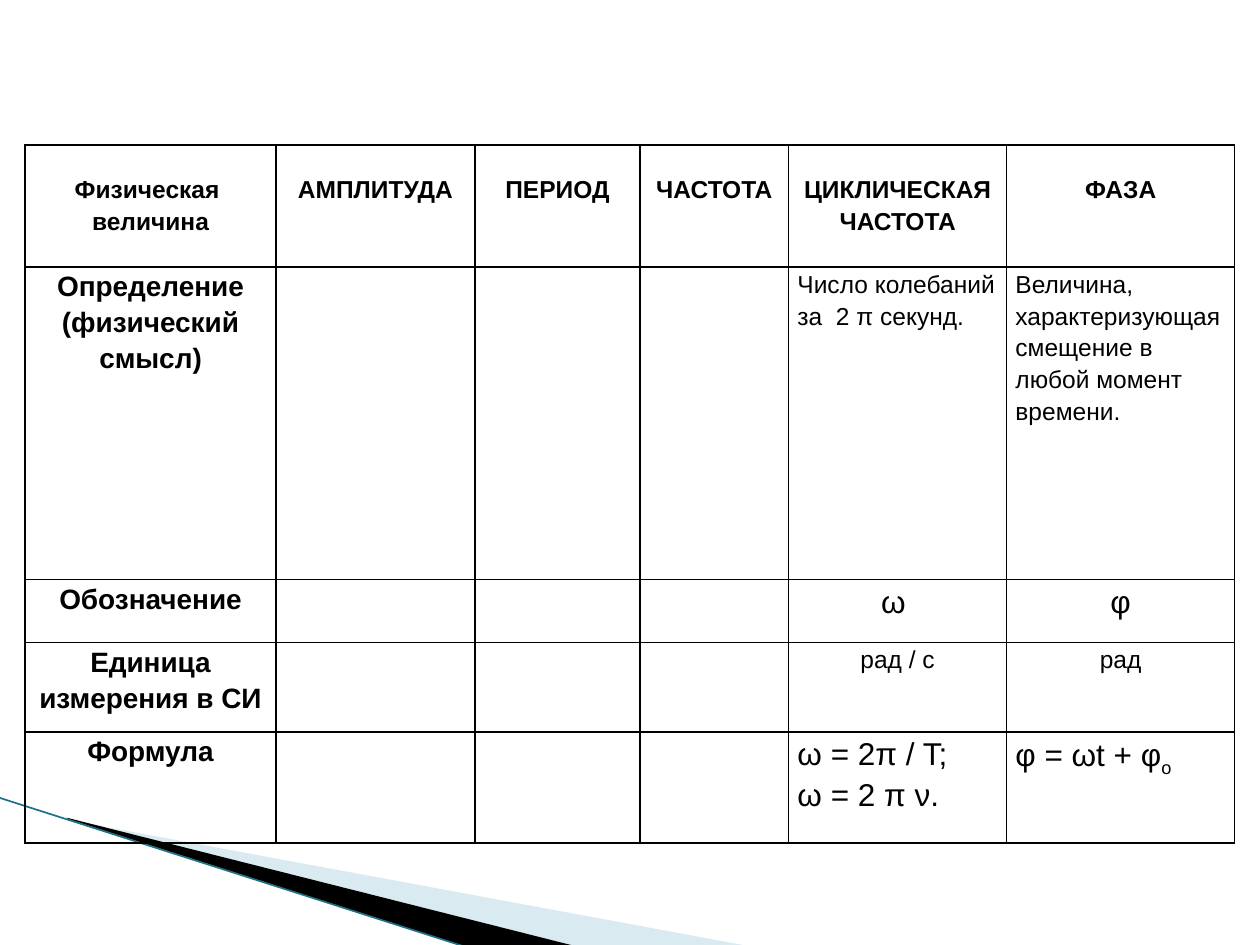
"""Build a slide with a table of oscillation quantities over a corner ornament."""
from lxml import etree
from pptx import Presentation
from pptx.dml.color import RGBColor
from pptx.enum.shapes import MSO_CONNECTOR
from pptx.enum.text import PP_ALIGN
from pptx.oxml import parse_xml
from pptx.oxml.ns import qn
from pptx.util import Inches, Pt

STRAIGHT = MSO_CONNECTOR.STRAIGHT
LEFT, CENTER = PP_ALIGN.LEFT, PP_ALIGN.CENTER
NAMESPACE = "http://schemas.openxmlformats.org/drawingml/2006/main"
BLACK = "000000"

HEADER = ["Физическая  величина", "АМПЛИТУДА", "ПЕРИОД", "ЧАСТОТА",
          "ЦИКЛИЧЕСКАЯ ЧАСТОТА", "ФАЗА"]
ROWS = [
    {"label": "Определение\n(физический смысл)", "size": 14, "align": LEFT,
     "values": ["Число колебаний за  2 π секунд.",
                "Величина, характеризующая смещение в любой момент времени."]},
    {"label": "Обозначение", "size": 18, "align": CENTER, "values": ["ω ", "φ"]},
    {"label": "Единица измерения в СИ", "size": 14, "align": CENTER,
     "values": ["рад / с", "рад"]},
    {"label": "Формула", "size": 18, "align": LEFT,
     "values": ["ω = 2π / Τ;\nω = 2 π ν.", "φ = ωt + φ"]},
]
PHASE_INDEX = "о"
COLUMN_WIDTHS = [1.99, 1.58, 1.31, 1.18, 1.73, 1.81]
ROW_HEIGHTS = [0.97, 2.48, 0.5, 0.71, 0.88]
TABLE_LEFT, TABLE_TOP = 0.2, 1.15
HEADER_INSET = 0.22

WEDGES = [
    {"points": [(0.55, 6.51), (5.95, 7.51), (4.56, 7.51), (0.55, 6.5)],
     "color": "A0CBDC", "opacity": 40},
    {"points": [(0.53, 6.49), (4.57, 7.51), (3.72, 7.52), (0.54, 6.5)],
     "color": BLACK, "opacity": 100},
]
EDGE = [(-0.01, 6.33), (3.71, 7.52)]
EDGE_COLOR = "1F7084"


def rgb(color):
    return RGBColor.from_string(color)


def add_wedge(page, points, color, opacity):
    corners = [(Inches(x), Inches(y)) for x, y in points]
    builder = page.shapes.build_freeform(*corners[0])
    builder.add_line_segments(corners[1:], close=True)
    wedge = builder.convert_to_shape()
    wedge.shadow.inherit = False
    wedge.fill.solid()
    wedge.fill.fore_color.rgb = rgb(color)
    wedge.line.fill.background()
    if opacity < 100:
        tint = wedge._element.spPr.find(qn("a:solidFill"))[0]
        etree.SubElement(tint, qn("a:alpha")).set("val", str(opacity * 1000))


def add_edge(page):
    start, end = EDGE
    edge = page.shapes.add_connector(
        STRAIGHT, *(Inches(value) for value in start + end))
    edge.line.color.rgb = rgb(EDGE_COLOR)
    edge.line.width = Pt(0.95)
    etree.SubElement(edge._element.spPr, qn("a:effectLst"))


def style_cell(cell):
    properties = cell._tc.get_or_add_tcPr()
    for side in "LRTB":
        properties.append(parse_xml(
            f'<a:ln{side} xmlns:a="{NAMESPACE}" w="{Pt(1)}"><a:solidFill>'
            f'<a:srgbClr val="{BLACK}"/></a:solidFill></a:ln{side}>'))
    cell.fill.background()
    cell.margin_left = cell.margin_right = Inches(0.07)
    cell.margin_top = cell.margin_bottom = 0


def format_span(span, size, bold):
    span.font.name = "Arial"
    span.font.size = Pt(size)
    span.font.bold = bold
    span.font.color.rgb = rgb(BLACK)


def write(cell, text, size, bold=False, align=CENTER):
    cell.text_frame.text = text
    for paragraph in cell.text_frame.paragraphs:
        paragraph.alignment = align
        paragraph.line_spacing = 1.15
        for span in paragraph.runs:
            format_span(span, size, bold)


def add_quantity_table(page):
    table = page.shapes.add_table(
        len(ROW_HEIGHTS), len(COLUMN_WIDTHS), Inches(TABLE_LEFT), Inches(TABLE_TOP),
        Inches(sum(COLUMN_WIDTHS)), Inches(sum(ROW_HEIGHTS))).table
    table.first_row = table.horz_banding = False
    for column, width in zip(table.columns, COLUMN_WIDTHS):
        column.width = Inches(width)
    for row, height in zip(table.rows, ROW_HEIGHTS):
        row.height = Inches(height)
    for cell in table.iter_cells():
        style_cell(cell)

    for column, title in enumerate(HEADER):
        cell = table.cell(0, column)
        write(cell, title, 14, bold=True)
        cell.margin_top = Inches(HEADER_INSET)
    first_value = len(HEADER) - 2
    for number, row in enumerate(ROWS, 1):
        write(table.cell(number, 0), row["label"], 16, bold=True)
        for column, value in enumerate(row["values"], first_value):
            write(table.cell(number, column), value, row["size"], align=row["align"])

    formula = table.cell(len(ROWS), len(HEADER) - 1).text_frame.paragraphs[0]
    index = formula.add_run()
    index.text = PHASE_INDEX
    format_span(index, ROWS[-1]["size"], False)
    index._r.get_or_add_rPr().set("baseline", "-25000")


def main():
    deck = Presentation()
    deck.slide_width, deck.slide_height = Inches(10), Inches(7.5)
    page = deck.slides.add_slide(deck.slide_layouts[6])
    for wedge in WEDGES:
        add_wedge(page, **wedge)
    add_edge(page)
    add_quantity_table(page)
    deck.save("out.pptx")


if __name__ == "__main__":
    main()
